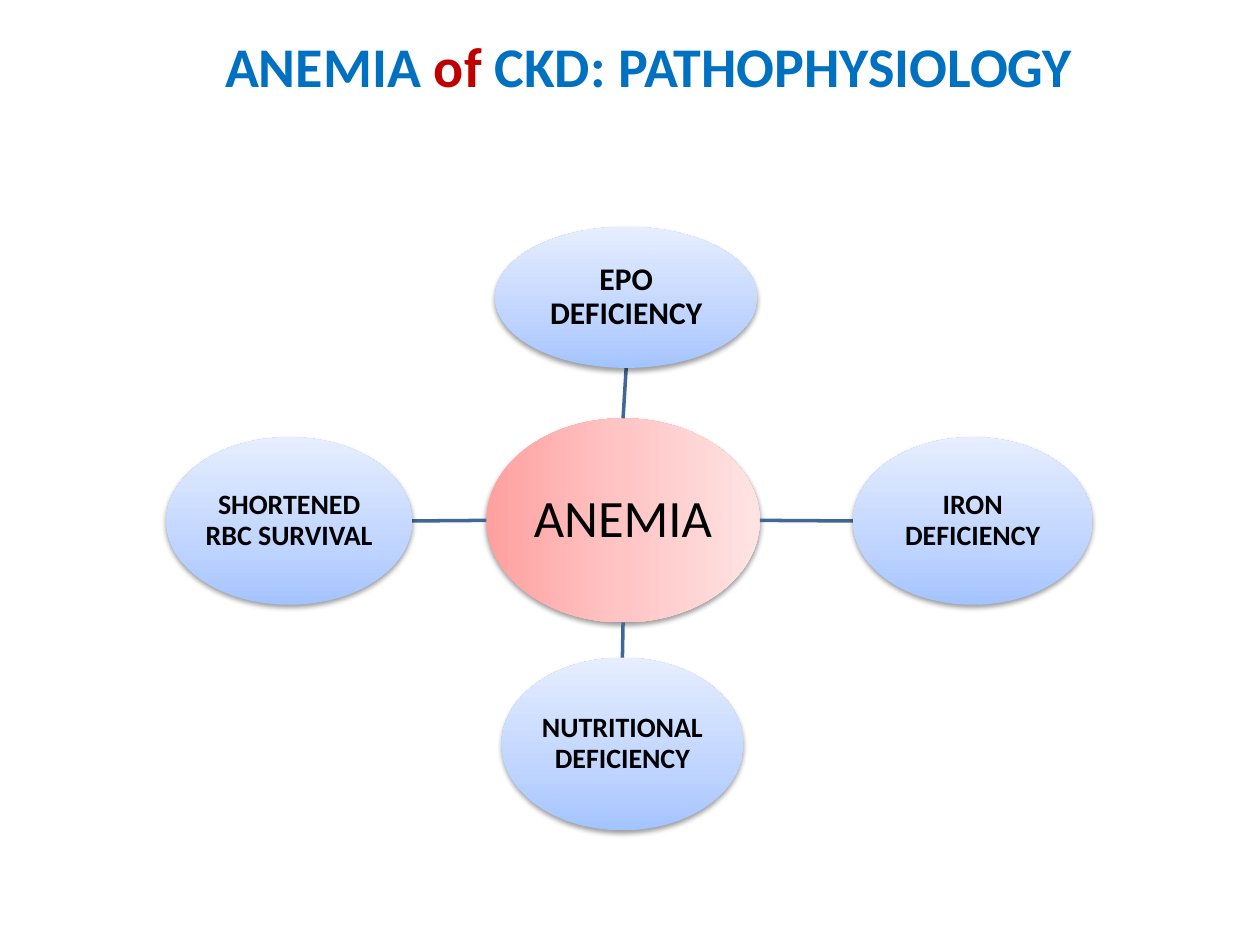
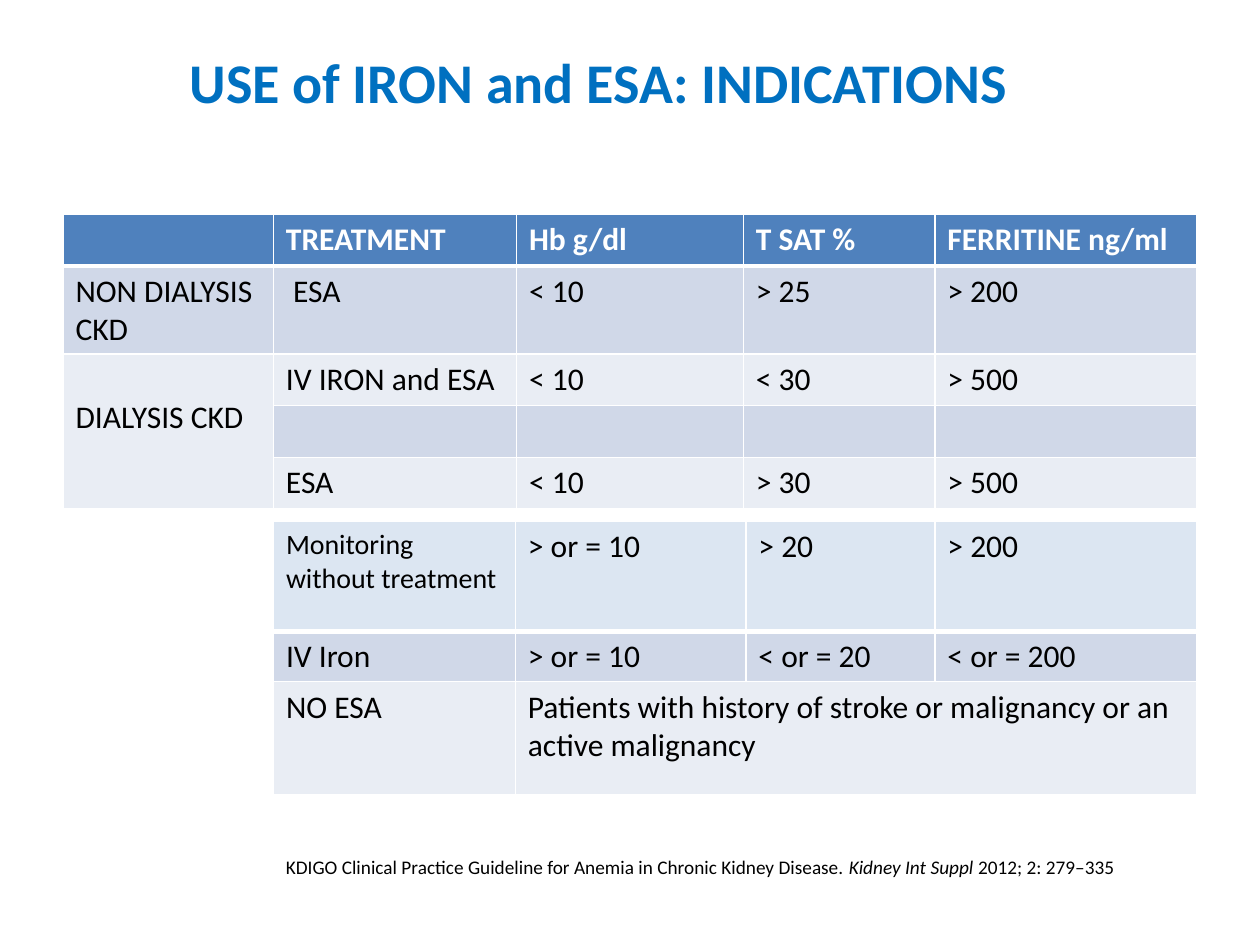
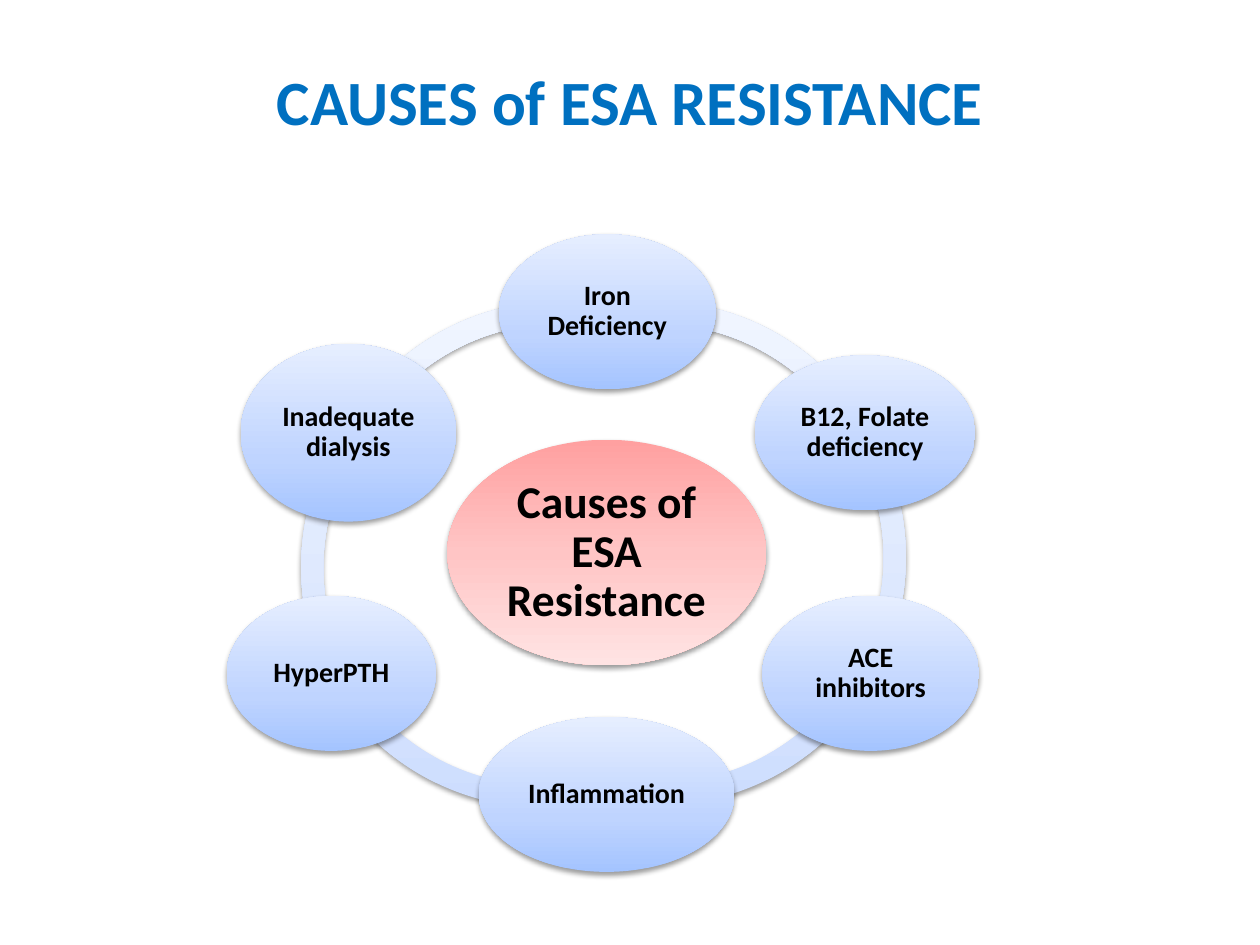
from dataclasses import dataclass

from lxml.etree import SubElement
from pptx import Presentation
from pptx.dml.color import RGBColor
from pptx.enum.shapes import MSO_CONNECTOR as Connector, MSO_SHAPE as Shape
from pptx.enum.text import MSO_ANCHOR as Anchor, PP_ALIGN as Align
from pptx.oxml.ns import qn
from pptx.util import Inches, Pt


@dataclass(frozen=True)
class Theme:
    font: str = "Calibri"
    title: str = "0070C0"
    accent: str = "C00000"
    text: str = "000000"
    white: str = "FFFFFF"
    link: str = "3F6797"
    header: str = "4F81BD"
    band: str = "D0D8E8"
    light: str = "E9EDF4"
    pale: str = "DCE6F2"
    red: tuple = ((0, "FFA0A0"), (50, "FFC5C5"), (100, "FFE3E3"))
    blue: tuple = ((0, "A4C4FF"), (35, "BFD4FF"), (100, "E6EEFF"))
    ring: tuple = ((0, "CDDDFE"), (35, "DBE6FE"), (100, "F0F5FF"))
    title_size: int = 32
    big_title_size: int = 36
    hub_size: int = 30
    small_hub_size: int = 26
    body_size: int = 18
    label_size: int = 16
    source_size: int = 11


THEME = Theme()
UPWARD, DOWNWARD, RIGHTWARD = 90, 270, 0

PATHOPHYSIOLOGY_TITLE = [("ANEMIA ", THEME.title), ("of ", THEME.accent), ("CKD: PATHOPHYSIOLOGY", THEME.title)]
ANEMIA = ("ANEMIA", (3.86, 3.32, 2.17, 1.62))
DEFICIENCIES = [
    ("EPO DEFICIENCY", (3.93, 1.8, 2.08, 1.12), "top", THEME.body_size),
    ("IRON DEFICIENCY", (6.77, 3.47, 1.9, 1.33), "right", THEME.label_size),
    ("NUTRITIONAL DEFICIENCY", (3.98, 5.22, 1.92, 1.37), "bottom", THEME.label_size),
    ("SHORTENED RBC SURVIVAL", (1.32, 3.47, 1.95, 1.33), "left", THEME.label_size),
]
OPPOSITE = {"top": "bottom", "bottom": "top", "left": "right", "right": "left"}

INDICATIONS = [
    ["", "TREATMENT", "Hb g/dl", "T SAT %", "FERRITINE ng/ml"],
    ["NON DIALYSIS CKD", " ESA", "< 10", "> 25", "> 200"],
    ["DIALYSIS CKD", "IV IRON and ESA", "< 10", "< 30", "> 500"],
    ["", "", "", "", ""],
    ["", "ESA", "< 10", "> 30", "> 500"],
]
OTHER_CASES = [
    ["Monitoring without treatment", "> or = 10", "> 20", "> 200"],
    ["IV Iron", "> or = 10", "< or = 20", "< or = 200"],
    ["NO ESA", "Patients with history of stroke or malignancy or an active malignancy", "", ""],
]
SOURCE = [
    ("KDIGO Clinical Practice Guideline for Anemia in Chronic Kidney Disease. ", False),
    ("Kidney Int Suppl ", True),
    ("2012; 2: 279–335", False),
]

RESISTANCE = ("Causes of ESA Resistance", (3.55, 3.49, 2.53, 1.79))
CAUSES = [
    ("Iron Deficiency", (3.96, 1.86, 1.72, 1.23)),
    ("B12, Folate deficiency", (5.99, 2.82, 1.75, 1.23)),
    ("ACE inhibitors", (6.05, 4.73, 1.72, 1.23)),
    ("Inflammation", (3.8, 5.69, 2.03, 1.23)),
    ("HyperPTH", (1.8, 4.73, 1.66, 1.23)),
    ("Inadequate dialysis", (1.91, 2.73, 1.71, 1.41)),
]
RING_SIZE = 3.91
RING_ARCS = [
    (2.49, 2.39, 208.73, 281.3),
    (2.39, 2.55, 154.06, 214.24),
    (2.36, 2.5, 74.91, 152.26),
    (3.27, 2.48, 28.45, 102.48),
    (3.28, 2.47, 328.71, 28.72),
    (3.24, 2.39, 258.7, 331.28),
]


def rgb(color):
    return RGBColor.from_string(color)


def inches(box):
    return [Inches(length) for length in box]


def style(font, size, color=THEME.text, bold=False):
    font.name, font.size, font.bold = THEME.font, Pt(size), bold
    font.color.rgb = rgb(color)


def add_title(slide, left, top, pieces, size=THEME.title_size):
    frame = slide.shapes.add_textbox(*inches((left, top, 9, 1.25))).text_frame
    frame.word_wrap, frame.vertical_anchor = True, Anchor.MIDDLE
    heading = frame.paragraphs[0]
    heading.alignment = Align.CENTER
    style(heading.font, size, THEME.title, True)
    for words, color in pieces:
        run = heading.add_run()
        run.text = words
        run.font.color.rgb = rgb(color)


def add_glossy(slide, kind, box, stops, angle):
    glossy = slide.shapes.add_shape(kind, *inches(box))
    glossy.fill.gradient()
    glossy.fill.gradient_angle = angle
    properties = glossy._element.spPr
    stop_list = properties.find(qn("a:gradFill")).find(qn("a:gsLst"))
    stop_list.clear()
    for position, color in stops:
        stop = SubElement(stop_list, qn("a:gs"), pos=str(position * 1000))
        SubElement(stop, qn("a:srgbClr"), val=color)
    glossy.line.fill.background()
    glossy.shadow.inherit = False
    shadow = SubElement(properties.find(qn("a:effectLst")), qn("a:outerShdw"),
                        blurRad=str(Pt(3.1)), dist=str(Pt(1.6)), dir="5400000", rotWithShape="0")
    black = SubElement(shadow, qn("a:srgbClr"), val=THEME.text)
    SubElement(black, qn("a:alpha"), val="38000")
    return glossy


def add_bubble(slide, label, box, size, stops=THEME.blue, angle=UPWARD, bold=True, inset=0.02):
    frame = add_glossy(slide, Shape.OVAL, box, stops, angle).text_frame
    frame.word_wrap, frame.vertical_anchor = True, Anchor.MIDDLE
    frame.margin_left = frame.margin_right = frame.margin_top = frame.margin_bottom = Inches(inset)
    paragraph = frame.paragraphs[0]
    paragraph.text = label
    paragraph.alignment, paragraph.line_spacing = Align.CENTER, 0.9
    style(paragraph.font, size, bold=bold)


def side_point(box, side):
    left, top, width, height = box
    across, down = {"top": (0.5, 0), "bottom": (0.5, 1), "left": (0, 0.5), "right": (1, 0.5)}[side]
    return inches((left + width * across, top + height * down))


def add_link(slide, start, end):
    link = slide.shapes.add_connector(Connector.STRAIGHT, *start, *end)
    link.line.color.rgb, link.line.width = rgb(THEME.link), Pt(2)
    SubElement(link._element.spPr, qn("a:effectLst"))


def set_borders(cell, widths):
    properties = cell._tc.get_or_add_tcPr()
    for place, (edge, width) in enumerate(widths.items()):
        line = SubElement(properties, qn(f"a:ln{edge}"), w=str(Pt(width)))
        properties.insert(place, line)
        SubElement(SubElement(line, qn("a:solidFill")), qn("a:srgbClr"), val=THEME.white)


def add_grid(slide, box, rows, widths, heights, fills, header=False):
    grid = slide.shapes.add_table(len(rows), len(widths), *inches(box)).table
    grid.first_row = grid.horz_banding = False
    for column, width in zip(grid.columns, widths):
        column.width = Inches(width)
    for r, (row, height, fill) in enumerate(zip(rows, heights, fills)):
        grid.rows[r].height = Inches(height)
        heading = header and r == 0
        for c, words in enumerate(row):
            cell = grid.cell(r, c)
            cell.fill.solid()
            cell.fill.fore_color.rgb = rgb(fill)
            set_borders(cell, {"L": 1, "R": 1, "T": 3 if r == 1 else 1, "B": 3 if r == 0 else 1})
            paragraph = cell.text_frame.paragraphs[0]
            paragraph.text = words
            style(paragraph.font, THEME.body_size, THEME.white if heading else THEME.text, heading)
    return grid


def build_pathophysiology(slide):
    add_title(slide, 0.65, -0.11, PATHOPHYSIOLOGY_TITLE)
    hub, hub_box = ANEMIA
    add_bubble(slide, hub, hub_box, THEME.hub_size, THEME.red, RIGHTWARD, bold=False)
    for label, box, side, size in DEFICIENCIES:
        add_link(slide, side_point(hub_box, side), side_point(box, OPPOSITE[side]))
        add_bubble(slide, label, box, size, inset=0.01)


def build_indications(slide):
    add_title(slide, 0.25, 0.02, [("USE of IRON and ESA: INDICATIONS", THEME.title)])
    main = add_grid(slide, (0.5, 1.7, 9, 2.32), INDICATIONS, (1.67, 1.93, 1.8, 1.52, 2.08), [0.41] * 5,
                    [THEME.header] + [THEME.band, THEME.light] * 2, header=True)
    dialysis = main.cell(2, 0)
    dialysis.merge(main.cell(4, 0))
    dialysis.margin_top = Inches(0.35)
    other = add_grid(slide, (2.17, 4.14, 7.33, 2.17), OTHER_CASES, (1.92, 1.83, 1.5, 2.08), (0.87, 0.36, 0.9),
                     (THEME.pale, THEME.band, THEME.light))
    other.cell(2, 1).merge(other.cell(2, 3))
    other.cell(0, 0).text_frame.paragraphs[0].font.size = Pt(THEME.label_size)
    frame = slide.shapes.add_textbox(*inches((2.17, 6.74, 7.33, 0.29))).text_frame
    frame.word_wrap = True
    citation = frame.paragraphs[0]
    style(citation.font, THEME.source_size)
    for words, italic in SOURCE:
        run = citation.add_run()
        run.text, run.font.italic = words, italic


def build_resistance(slide):
    add_title(slide, 0.5, 0.17, [("CAUSES of ESA RESISTANCE", THEME.title)], THEME.big_title_size)
    for left, top, start, end in RING_ARCS:
        arc = add_glossy(slide, Shape.BLOCK_ARC, (left, top, RING_SIZE, RING_SIZE), THEME.ring, UPWARD)
        arc.adjustments[0], arc.adjustments[1], arc.adjustments[2] = start * 0.6, end * 0.6, 0.045
    hub, hub_box = RESISTANCE
    add_bubble(slide, hub, hub_box, THEME.small_hub_size, THEME.red, DOWNWARD, inset=0.04)
    for label, box in CAUSES:
        add_bubble(slide, label, box, THEME.label_size)


def main():
    deck = Presentation()
    deck.slide_width, deck.slide_height = Inches(10), Inches(7.5)
    for build in (build_pathophysiology, build_indications, build_resistance):
        build(deck.slides.add_slide(deck.slide_layouts[6]))
    deck.save("out.pptx")


if __name__ == "__main__":
    main()
